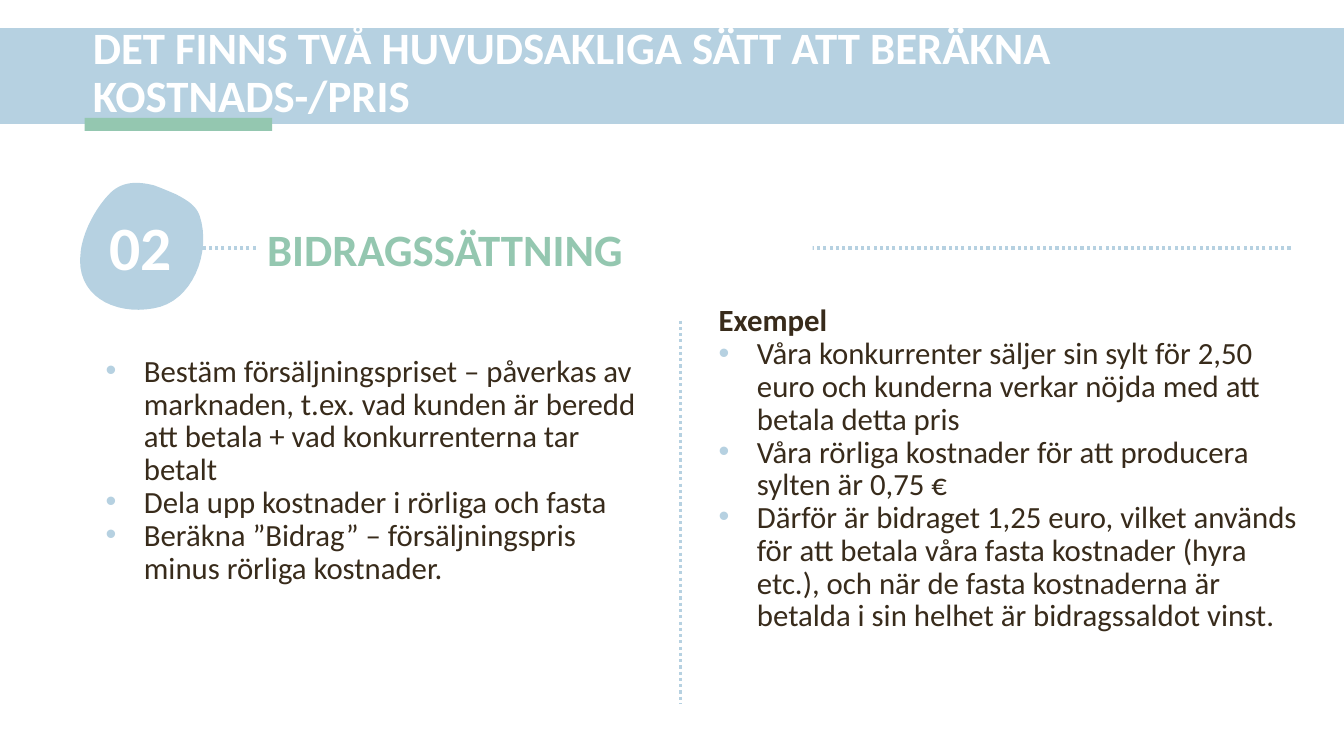
from dataclasses import dataclass

from lxml import etree
from pptx import Presentation
from pptx.dml.color import RGBColor
from pptx.enum.dml import MSO_LINE
from pptx.enum.shapes import MSO_CONNECTOR, MSO_SHAPE
from pptx.enum.text import MSO_ANCHOR, MSO_AUTO_SIZE, PP_ALIGN
from pptx.oxml.ns import qn
from pptx.util import Inches, Pt

RECTANGLE = MSO_SHAPE.RECTANGLE
STRAIGHT = MSO_CONNECTOR.STRAIGHT
DOTTED = MSO_LINE.ROUND_DOT
LEFT, CENTER = PP_ALIGN.LEFT, PP_ALIGN.CENTER
TOP, MIDDLE = MSO_ANCHOR.TOP, MSO_ANCHOR.MIDDLE
NO_AUTOFIT = MSO_AUTO_SIZE.NONE


@dataclass(frozen=True)
class Theme:
    font: str = "Calibri"
    blue: RGBColor = RGBColor(0xB6, 0xD1, 0xE1)
    green: RGBColor = RGBColor(0x94, 0xC7, 0xB0)
    brown: RGBColor = RGBColor(0x38, 0x2B, 0x1B)
    white: RGBColor = RGBColor(0xFF, 0xFF, 0xFF)
    heading: Pt = Pt(32)
    number: Pt = Pt(44)
    body: Pt = Pt(22)
    body_spacing: Pt = Pt(23.4)
    heading_spacing: Pt = Pt(32.4)


THEME = Theme()


def write(shape, lines, size, color, spacing, bold=False, align=LEFT, anchor=TOP):
    """Fill a shape with (text, bulleted) lines; unbulleted lines are bold if asked."""
    frame = shape.text_frame
    frame.word_wrap = True
    frame.auto_size = NO_AUTOFIT
    frame.vertical_anchor = anchor
    for index, (text, bulleted) in enumerate(lines):
        paragraph = frame.add_paragraph() if index else frame.paragraphs[0]
        if bulleted:
            properties = paragraph._p.get_or_add_pPr()
            properties.set("marL", str(Inches(0.38)))
            properties.set("indent", str(-Inches(0.38)))
            bullet_color = etree.SubElement(properties, qn("a:buClr"))
            etree.SubElement(bullet_color, qn("a:srgbClr"), val=str(THEME.blue))
            etree.SubElement(properties, qn("a:buFont"), typeface="Arial")
            etree.SubElement(properties, qn("a:buChar"), char="•")
        paragraph.alignment = align
        paragraph.line_spacing = spacing
        run = paragraph.add_run()
        run.text = text
        run.font.name = THEME.font
        run.font.size = size
        run.font.bold = bold and not bulleted
        run.font.color.rgb = color


def paint(shape, color):
    shape.shadow.inherit = False
    shape.fill.solid()
    shape.fill.fore_color.rgb = color
    shape.line.fill.background()


prs = Presentation()
prs.slide_width, prs.slide_height = Inches(13.33), Inches(7.5)
slide = prs.slides.add_slide(prs.slide_layouts[5])
shapes = slide.shapes

# Title band with its green underline
for left, top, width, height, color in (
    (0, 0.28, 13.33, 0.95, THEME.blue),
    (0.84, 1.17, 1.86, 0.13, THEME.green),
):
    bar = shapes.add_shape(
        RECTANGLE, Inches(left), Inches(top), Inches(width), Inches(height))
    paint(bar, color)

title = shapes.title
title.left, title.top = Inches(0.82), Inches(0.34)
title.width, title.height = Inches(11.93), Inches(0.79)
write(title, [("DET FINNS TVÅ HUVUDSAKLIGA SÄTT ATT BERÄKNA KOSTNADS-/PRIS", False)],
      THEME.heading, THEME.white, 0.9, bold=True, anchor=MIDDLE)
shapes._spTree.append(title.element)  # bring the title in front of the band

# Dotted rules: one behind the heading, one between the columns
for x1, y1, x2, y2 in ((12.8, 2.46, 0.9, 2.46), (6.75, 3.18, 6.75, 6.98)):
    rule = shapes.add_connector(
        STRAIGHT, Inches(x1), Inches(y1), Inches(x2), Inches(y2))
    rule.line.color.rgb = THEME.blue
    rule.line.width = Pt(2.25)
    rule.line.dash_style = DOTTED
    etree.SubElement(rule.element.spPr, qn("a:effectLst"))

heading = shapes.add_shape(
    RECTANGLE, Inches(2.55), Inches(2.23), Inches(5.51), Inches(0.48))
paint(heading, THEME.white)
write(heading, [("BIDRAGSSÄTTNING", False)], THEME.heading, THEME.green,
      THEME.heading_spacing, bold=True)

# Two text columns
steps = [
    ("Bestäm försäljningspriset – påverkas av marknaden, t.ex. vad kunden är "
     "beredd att betala + vad konkurrenterna tar betalt", True),
    ("Dela upp kostnader i rörliga och fasta", True),
    ("Beräkna ”Bidrag” – försäljningspris minus rörliga kostnader.", True),
]
example = [
    ("Exempel", False),
    ("Våra konkurrenter säljer sin sylt för 2,50 euro och kunderna verkar nöjda "
     "med att betala detta pris", True),
    ("Våra rörliga kostnader för att producera sylten är 0,75 €", True),
    ("Därför är bidraget 1,25 euro, vilket används för att betala våra fasta "
     "kostnader (hyra etc.), och när de fasta kostnaderna är betalda i sin helhet "
     "är bidragssaldot vinst.", True),
]
for lines, left, top, width in ((steps, 0.95, 3.48, 5.46), (example, 7.03, 2.98, 6.06)):
    column = shapes.add_textbox(
        Inches(left), Inches(top), Inches(width), Inches(3.63))
    write(column, lines, THEME.body, THEME.brown, THEME.body_spacing, bold=True)

# Numbered blob: cubic curves sampled into short segments
blob_start = (1.53, 1.84)
blob_curves = [
    ((1.37, 1.8), (1.2, 1.79), (1.07, 1.94)),
    ((0.94, 2.08), (0.82, 2.31), (0.8, 2.5)),
    ((0.74, 2.93), (1.13, 3.13), (1.52, 3.06)),
    ((1.91, 3), (2.1, 2.5), (1.98, 2.14)),
    ((1.94, 2.03), (1.84, 1.98), (1.75, 1.93)),
    ((1.68, 1.9), (1.61, 1.87), (1.53, 1.84)),
]
STEPS = 16
outline = []
start = blob_start
for control_1, control_2, end in blob_curves:
    for step in range(1, STEPS + 1):
        t = step / STEPS
        outline.append(tuple(
            Inches((1 - t) ** 3 * a + 3 * (1 - t) ** 2 * t * b
                   + 3 * (1 - t) * t ** 2 * c + t ** 3 * d)
            for a, b, c, d in zip(start, control_1, control_2, end)))
    start = end
builder = shapes.build_freeform(Inches(blob_start[0]), Inches(blob_start[1]))
builder.add_line_segments(outline, close=True)
paint(builder.convert_to_shape(), THEME.blue)

number = shapes.add_textbox(Inches(0.79), Inches(2.43), Inches(1.21), Inches(1.01))
write(number, [("02", False)], THEME.number, THEME.white, THEME.body_spacing,
      bold=True, align=CENTER)

prs.save("out.pptx")
